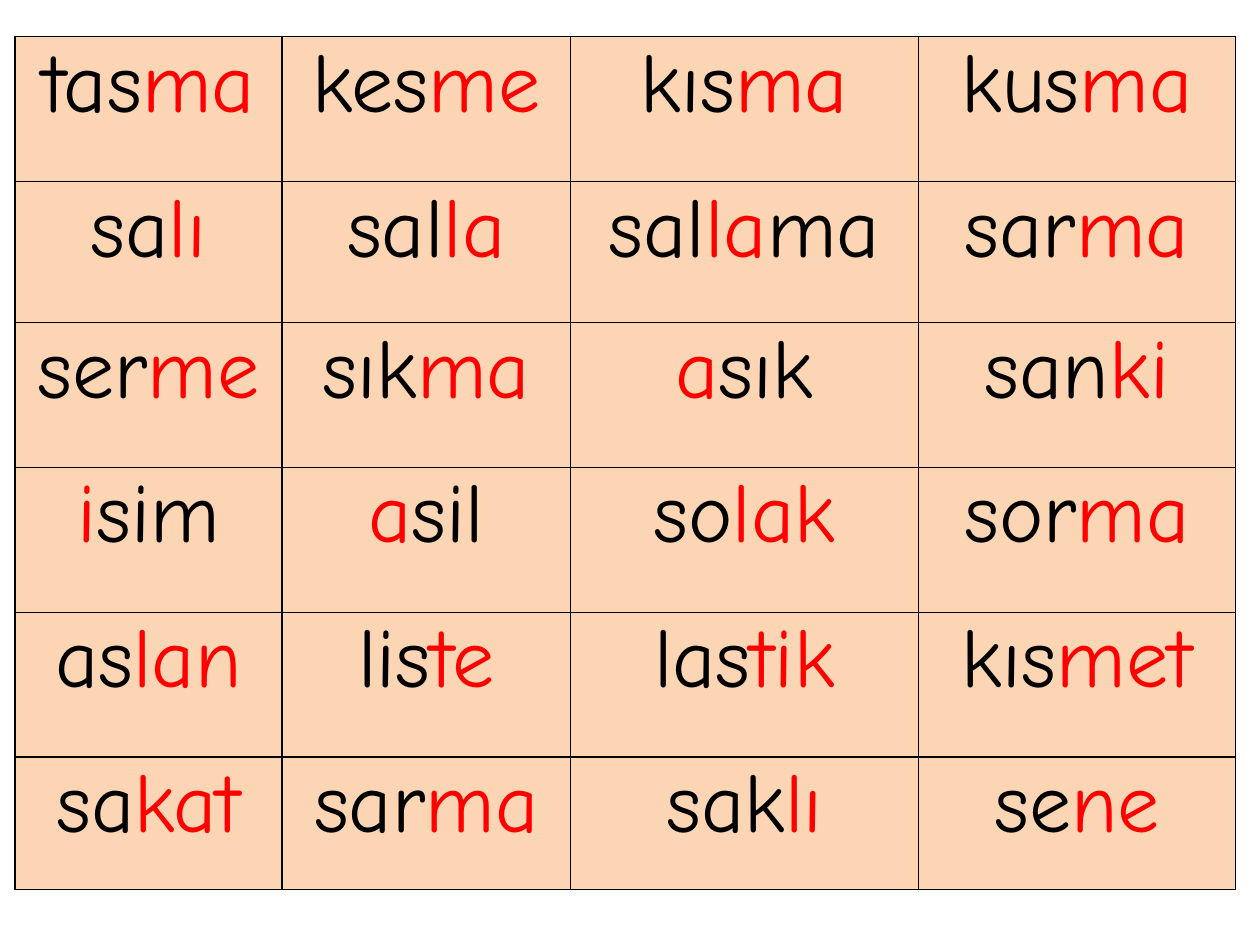
from lxml.etree import SubElement
from pptx import Presentation
from pptx.dml.color import RGBColor
from pptx.enum.text import PP_ALIGN
from pptx.oxml.ns import qn
from pptx.util import Pt

BLACK, RED, PEACH = "000000", "FF0000", "FCD5B5"
COLUMN_WIDTHS = [152.6, 164.9, 198.7, 181.4]
ROW_HEIGHTS = [82.8, 80.6, 82.8, 82.8, 82.8, 75.6]
WORDS = [
    ["tas|ma", "kes|me", "kıs|ma", "kus|ma"],
    ["sa|lı", "sal|la", "sal|la|ma", "sar|ma"],
    ["ser|me", "sık|ma", "|a|sık", "san|ki"],
    ["|i|sim", "|a|sil", "so|lak", "sor|ma"],
    ["as|lan", "lis|te", "las|tik", "kıs|met"],
    ["sa|kat", "sar|ma", "sak|lı", "se|ne"],
]
CELL_FORMAT = {
    "margin_left": Pt(5),
    "margin_right": Pt(5),
    "margin_top": 0,
    "margin_bottom": 0,
}
FONT_FORMAT = {"name": "Comic Neue", "size": Pt(48)}


def set_attributes(target, values):
    for name, value in values.items():
        setattr(target, name, value)


def paint(color_format, hex_color):
    color_format.rgb = RGBColor.from_string(hex_color)


def add_borders(cell):
    properties = cell._tc.get_or_add_tcPr()
    for side in ("a:lnL", "a:lnR", "a:lnT", "a:lnB"):
        line = SubElement(properties, qn(side), w=str(Pt(1)))
        fill = SubElement(line, qn("a:solidFill"))
        SubElement(fill, qn("a:srgbClr"), val=BLACK)


def write_word(cell, word):
    para = cell.text_frame.paragraphs[0]
    para.alignment = PP_ALIGN.CENTER
    for index, syllable in enumerate(word.split("|")):
        if syllable:
            span = para.add_run()
            span.text = syllable
            set_attributes(span.font, FONT_FORMAT)
            paint(span.font.color, RED if index % 2 else BLACK)


def add_word_table(page, left, top, width, height):
    frame = page.shapes.add_table(
        len(ROW_HEIGHTS), len(COLUMN_WIDTHS), Pt(left), Pt(top), Pt(width), Pt(height)
    )
    table = frame.table
    for column, column_width in zip(table.columns, COLUMN_WIDTHS):
        column.width = Pt(column_width)
    for row, row_height, words in zip(table.rows, ROW_HEIGHTS, WORDS):
        row.height = Pt(row_height)
        for cell, word in zip(row.cells, words):
            set_attributes(cell, CELL_FORMAT)
            add_borders(cell)
            cell.fill.solid()
            paint(cell.fill.fore_color, PEACH)
            write_word(cell, word)


def main():
    deck = Presentation()
    set_attributes(deck, {"slide_width": Pt(720), "slide_height": Pt(540)})
    page = deck.slides.add_slide(deck.slide_layouts[6])
    add_word_table(page, 8.6, 20.9, sum(COLUMN_WIDTHS), sum(ROW_HEIGHTS))
    deck.save("out.pptx")


if __name__ == "__main__":
    main()
